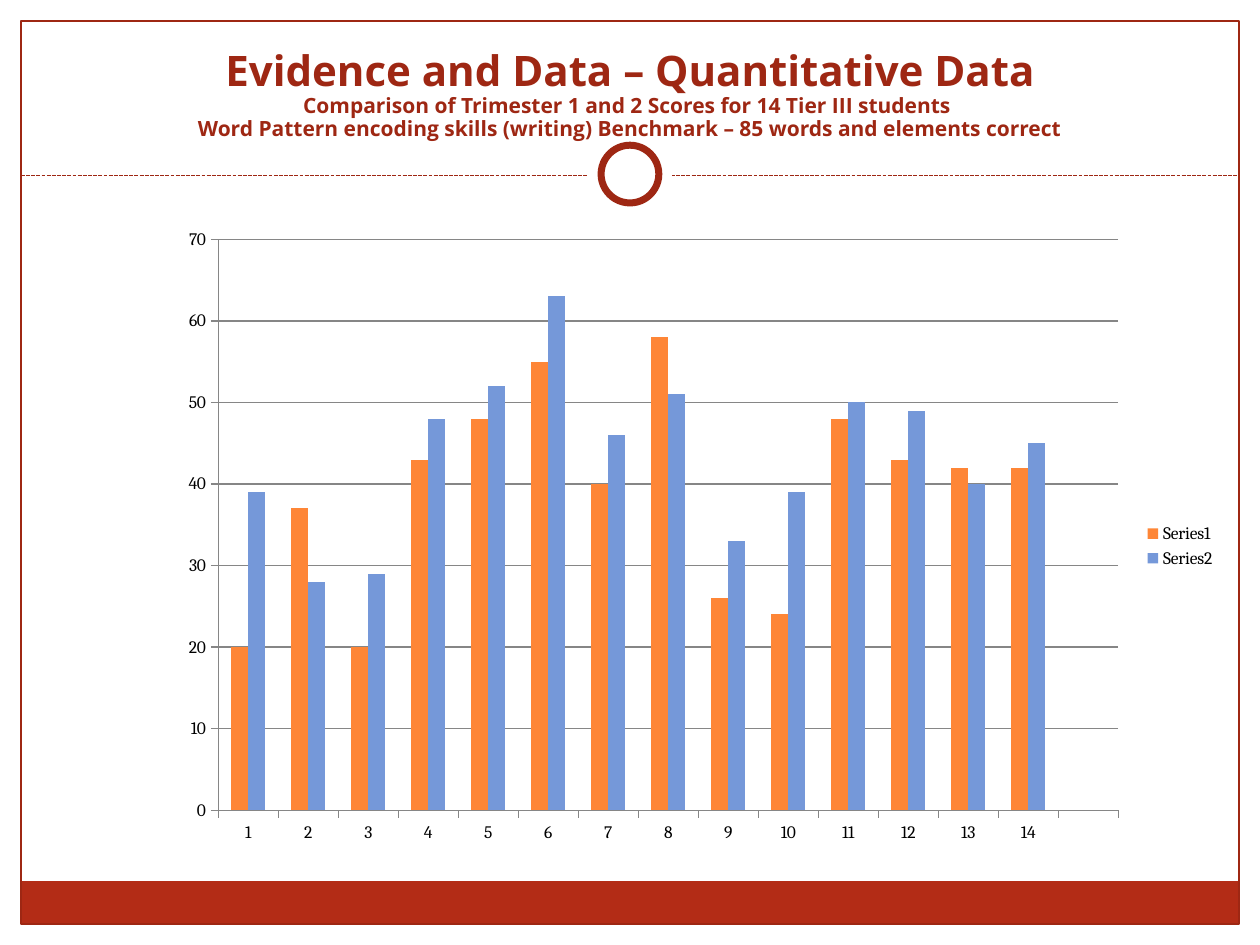
from lxml import etree
from pptx import Presentation
from pptx import util as u
from pptx.chart import data as cd
from pptx.dml.color import RGBColor
from pptx.enum import chart as ch, dml, shapes, text
from pptx.oxml import parse_xml
from pptx.oxml.ns import nsdecls, qn

HUES = {"white": "FFFFFF", "band": "B32C16", "red": "9E2713", "black": "000000",
        "grey": "868686", "first": "FE8637", "second": "7598D9"}
SCORES = {
    "first": ("Series1", [20, 37, 20, 43, 48, 55, 40, 58, 26, 24, 48, 43, 42, 42, None]),
    "second": ("Series2", [39, 28, 29, 48, 52, 63, 46, 51, 33, 39, 50, 49, 40, 45, None]),
}
TITLE = [
    ("Evidence and Data – Quantitative Data", 24),
    ("Comparison of Trimester 1 and 2 Scores for 14 Tier III students ", 12),
    ("Word Pattern encoding skills (writing) Benchmark – 85 words and elements correct", 12),
]
PLOT = {"x": 0.156, "y": 0.029, "w": 0.752, "h": 0.877}


class Deck:
    head = "Open Sans"
    body = "Cambria"

    def __init__(self, wide, high):
        self.prs = Presentation()
        self.prs.slide_width, self.prs.slide_height = u.Pt(wide), u.Pt(high)
        self.slide = self.prs.slides.add_slide(self.prs.slide_layouts[5])
        self.items = self.slide.shapes

    def hue(self, name):
        return RGBColor.from_string(HUES[name])

    def shape(self, kind, box, fill=None, line=None, width=0.75):
        item = self.items.add_shape(kind, *map(u.Pt, box))
        item.shadow.inherit = False
        if fill:
            item.fill.solid()
            item.fill.fore_color.rgb = self.hue(fill)
        else:
            item.fill.background()
        if line:
            item.line.color.rgb = self.hue(line)
            item.line.width = u.Pt(width)
        else:
            item.line.fill.background()

    def rule(self, left, right, top):
        item = self.items.add_connector(
            shapes.MSO_CONNECTOR.STRAIGHT, *map(u.Pt, (left, top, right, top)))
        item.line.color.rgb = self.hue("red")
        item.line.width = u.Pt(0.75)
        item.line.dash_style = dml.MSO_LINE.SQUARE_DOT
        etree.SubElement(item.element.spPr, qn("a:effectLst"))

    def title(self, box, lines):
        item = self.items.title
        item.left, item.top, item.width, item.height = map(u.Pt, box)
        self.items.element.append(item.element)
        frame = item.text_frame
        frame.auto_size = text.MSO_AUTO_SIZE.NONE
        frame.vertical_anchor = text.MSO_ANCHOR.BOTTOM
        par = frame.paragraphs[0]
        par.alignment = text.PP_ALIGN.CENTER
        par.line_spacing = 0.9
        par.font.name = self.head
        par.font.bold = True
        par.font.color.rgb = self.hue("red")
        for i, (words, size) in enumerate(lines):
            if i:
                par.add_line_break()
            run = par.add_run()
            run.text = words
            run.font.size = u.Pt(size)

    def axis(self, axis):
        axis.major_tick_mark = ch.XL_TICK_MARK.OUTSIDE
        axis.format.line.color.rgb = self.hue("grey")
        axis.format.line.width = u.Pt(0.75)

    def chart(self, box, cats, rows):
        data = cd.CategoryChartData()
        data.categories = cats
        for name, vals in rows.values():
            data.add_series(name, vals)
        chart = self.items.add_chart(
            ch.XL_CHART_TYPE.COLUMN_CLUSTERED, *map(u.Pt, box), data).chart
        chart.has_title = False
        chart.font.name = self.body
        chart.font.size = u.Pt(10)
        chart.font.color.rgb = self.hue("black")
        chart.has_legend = True
        chart.legend.position = ch.XL_LEGEND_POSITION.RIGHT
        chart.legend.include_in_layout = False
        plot = chart.plots[0]
        plot.gap_width, plot.overlap = 150, 0
        plot.vary_by_categories = False
        for bars, name in zip(plot.series, rows):
            bars.format.fill.solid()
            bars.format.fill.fore_color.rgb = self.hue(name)
            bars.invert_if_negative = False
        self.axis(chart.category_axis)
        axis = chart.value_axis
        self.axis(axis)
        axis.minimum_scale, axis.maximum_scale, axis.major_unit = 0, 70, 10
        axis.has_major_gridlines = True
        grid = axis.major_gridlines.format.line
        grid.color.rgb = self.hue("grey")
        grid.width = u.Pt(0.75)
        self.place(chart)

    def place(self, chart):
        area = chart._chartSpace.chart.plotArea
        for old in area.findall(qn("c:layout")):
            area.remove(old)
        modes = '<c:xMode val="edge"/><c:yMode val="edge"/>'
        sizes = "".join(f'<c:{key} val="{val}"/>' for key, val in PLOT.items())
        area.insert(0, parse_xml(
            f'<c:layout {nsdecls("c")}><c:manualLayout><c:layoutTarget val="inner"/>'
            f'{modes}{sizes}</c:manualLayout></c:layout>'))


def main():
    deck = Deck(720, 540)
    rect, oval = shapes.MSO_SHAPE.RECTANGLE, shapes.MSO_SHAPE.OVAL
    edge = 12
    deck.shape(rect, (0, 0, 720, 109.5), "white")
    for left in (0, 720 - edge):
        deck.shape(rect, (left, 0, edge, 540), "white")
    deck.shape(rect, (edge, 503.5, 696, 24.5), "band")
    deck.shape(rect, (edge, edge, 696, 516), line="red")
    deck.rule(edge, 720 - edge, 100.5)
    for size, line in ((48, None), (33, "red")):
        deck.shape(oval, (360 - size / 2, 99.5 - size / 2, size, size), "white", line, 4)
    deck.title((24, 12, 672, 72), TITLE)
    cats = [str(n) for n in range(1, 15)] + [""]
    deck.chart((18, 126, 684, 372), cats, SCORES)
    deck.prs.save("out.pptx")


if __name__ == "__main__":
    main()
